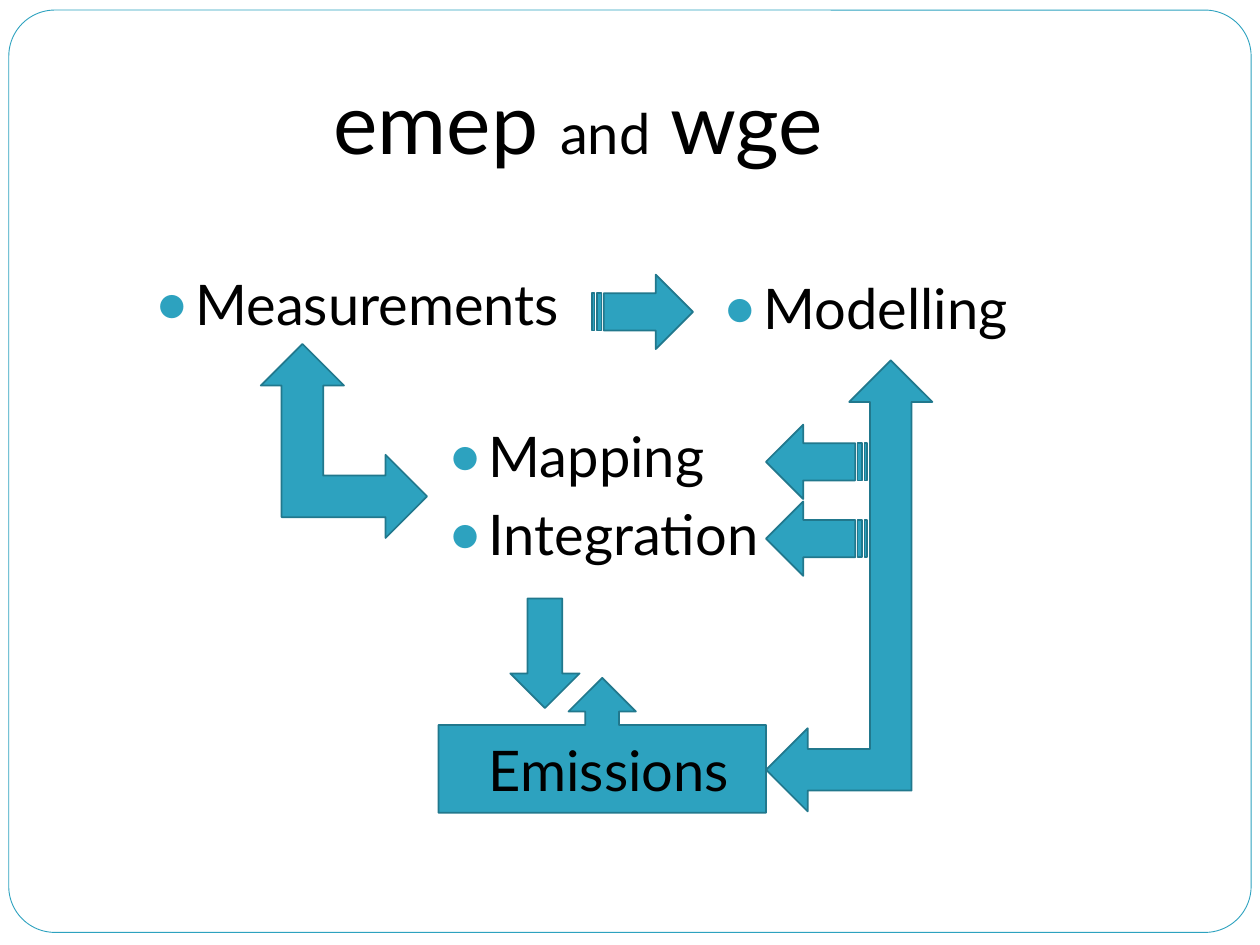
"""Build the slide on how measurements, modelling and emissions connect."""
from lxml.etree import SubElement as Sub
from pptx import Presentation
from pptx.dml.color import RGBColor as RGB
from pptx.enum.shapes import MSO_SHAPE as Shape
from pptx.enum.text import MSO_ANCHOR as Anchor, MSO_AUTO_SIZE as Fit, PP_ALIGN as Align
from pptx.oxml.ns import qn
from pptx.util import Inches, Pt

COLORS = {"teal": "2DA2BF", "edge": "21788D", "text": "000000", "back": "FFFFFF"}
FONT = "Lato"
TITLE = [("emep ", 48), ("and", 32), (" wge", 48)]
TITLE_BOX = (0.34, 0.21, 8.5, 1.25)
INPUTS = [
    ("Measurements", (1.15, 1.98, 4.1, 0.85)),
    ("Modelling", (5.66, 2.04, 4.1, 0.79)),
]
RESULTS = ["Mapping", "Integration"]
RESULT_BOX = (3.48, 3.3, 4.1, 1.4)
FRAME = (0.07, 0.08, 9.86, 7.32)
SOURCE = ("Emissions", (3.48, 5.38, 2.6, 1.07))
ARROWS = [
    (Shape.DOWN_ARROW, (4.05, 4.75, 0.55, 0.87), False),
    (Shape.LEFT_UP_ARROW, (6.08, 2.86, 1.32, 3.58), False),
    (Shape.LEFT_UP_ARROW, (2.07, 2.73, 1.32, 1.54), True),
    (Shape.STRIPED_RIGHT_ARROW, (4.7, 2.18, 0.8, 0.59), False),
    (Shape.STRIPED_RIGHT_ARROW, (6.08, 3.37, 0.8, 0.59), True),
    (Shape.STRIPED_RIGHT_ARROW, (6.08, 3.98, 0.8, 0.59), True),
]


def color(name):
    return RGB.from_string(COLORS[name])


def place(item, box):
    item.left, item.top, item.width, item.height = map(Inches, box)


def style(font, size=32):
    font.name, font.size = FONT, Pt(size)
    font.color.rgb = color("text")


def draw(slide, kind, box, fill="teal", edge="edge", width=1):
    item = slide.shapes.add_shape(kind, *map(Inches, box))
    item.shadow.inherit = False
    item.fill.solid()
    item.fill.fore_color.rgb = color(fill)
    item.line.color.rgb = color(edge)
    item.line.width = Pt(width)
    return item


def bullet(para):
    props = para._p.get_or_add_pPr()
    props.set("marL", str(Inches(0.3)))
    props.set("indent", str(-Inches(0.3)))
    Sub(Sub(props, qn("a:buClr")), qn("a:srgbClr"), val=COLORS["teal"])
    Sub(props, qn("a:buSzPct"), val="85000")
    Sub(props, qn("a:buFont"), typeface=FONT)
    Sub(props, qn("a:buChar"), char="●")


def add_list(item, lines, anchor):
    frame = item.text_frame
    frame.word_wrap, frame.auto_size = True, Fit.NONE
    frame.vertical_anchor = anchor
    frame.text = "\n".join(lines)
    for para in frame.paragraphs:
        para.space_before = Pt(5.8)
        style(para.font)
        bullet(para)


def add_title(item):
    place(item, TITLE_BOX)
    frame = item.text_frame
    frame.auto_size, frame.vertical_anchor = Fit.NONE, Anchor.BOTTOM
    frame.margin_bottom = Inches(0.1)
    para = frame.paragraphs[0]
    para.alignment = Align.CENTER
    for text, size in TITLE:
        run = para.add_run()
        run.text = text
        style(run.font, size)


def add_source(slide):
    text, box = SOURCE
    item = draw(slide, Shape.UP_ARROW_CALLOUT, box)
    frame = item.text_frame
    frame.text = text
    frame.vertical_anchor = Anchor.MIDDLE
    frame.margin_left = Inches(0.4)
    frame.margin_right = frame.margin_top = frame.margin_bottom = 0
    para = frame.paragraphs[0]
    para.alignment = Align.LEFT
    style(para.font)


def main():
    deck = Presentation()
    deck.slide_width, deck.slide_height = Inches(10), Inches(7.5)
    slide = deck.slides.add_slide(deck.slide_layouts[3])

    border = draw(slide, Shape.ROUNDED_RECTANGLE, FRAME, "back", "teal", 0.5)
    border.adjustments[0] = 0.05
    border.element.getparent().insert(2, border.element)

    add_source(slide)
    add_title(slide.shapes.title)
    for index, (text, box) in enumerate(INPUTS, 1):
        item = slide.placeholders[index]
        place(item, box)
        add_list(item, [text], Anchor.MIDDLE)
    results = slide.shapes.add_textbox(*map(Inches, RESULT_BOX))
    add_list(results, RESULTS, Anchor.TOP)

    for kind, box, flip in ARROWS:
        arrow = draw(slide, kind, box)
        if flip:
            arrow.element.spPr.get_or_add_xfrm().set("flipH", "1")
    deck.save("out.pptx")


if __name__ == "__main__":
    main()
